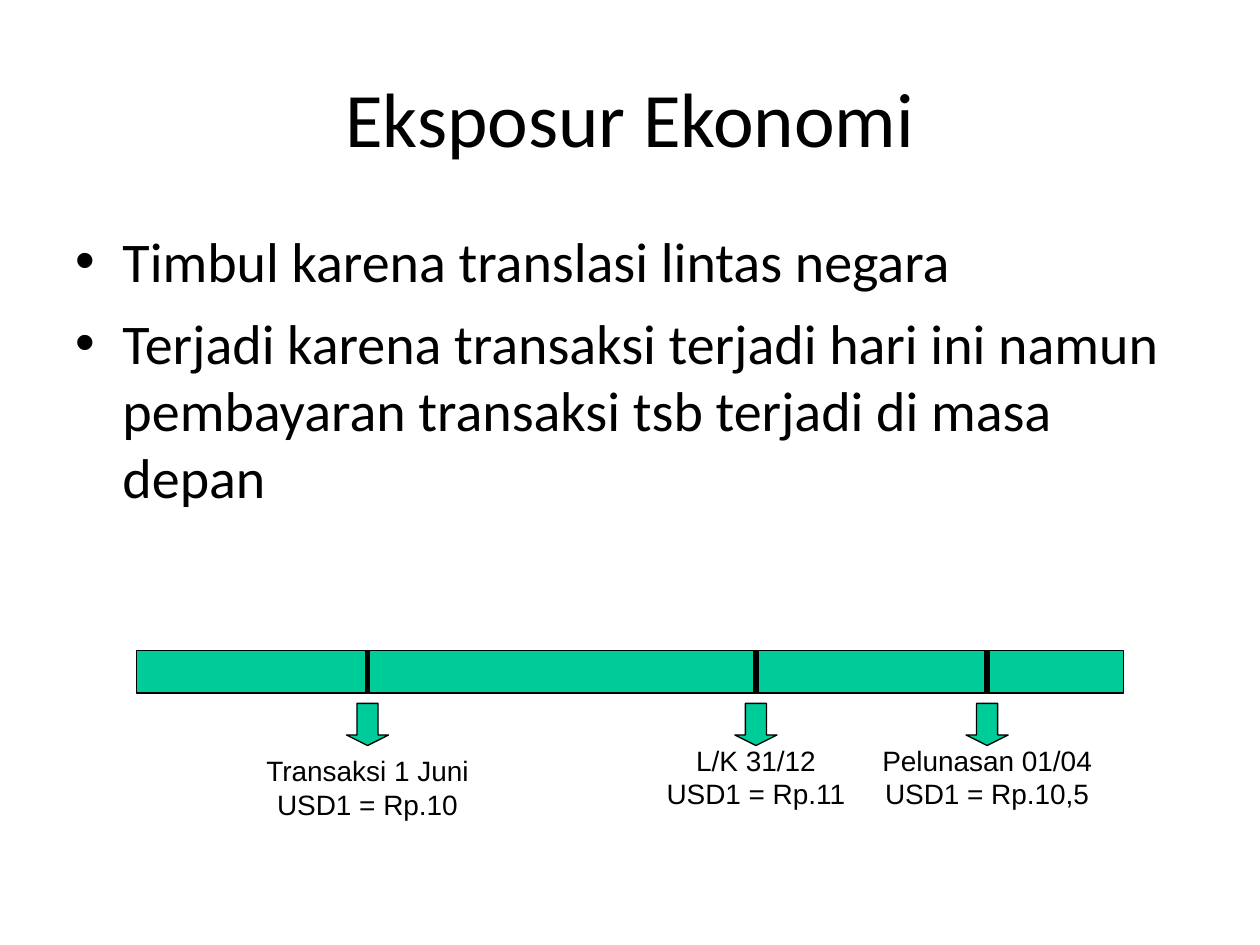
from lxml.etree import SubElement
from pptx import Presentation
from pptx.dml.color import RGBColor
from pptx.enum.shapes import MSO_CONNECTOR, MSO_SHAPE
from pptx.enum.text import MSO_ANCHOR, PP_ALIGN
from pptx.oxml.ns import qn
from pptx.util import Cm, Pt

# Content
TITLE = "Eksposur Ekonomi"
BULLETS = [
    "Timbul karena translasi lintas negara",
    "Terjadi karena transaksi terjadi hari ini namun pembayaran transaksi tsb "
    "terjadi di masa depan",
]
# Centre of the mark (cm), label height (cm), label lines
EVENTS = [
    (7.41, 3.39, ["Transaksi 1 Juni", "USD1 = Rp.10"]),
    (15.24, 2.96, ["L/K 31/12", "USD1 = Rp.11"]),
    (19.9, 2.96, ["Pelunasan 01/04", "USD1 = Rp.10,5"]),
]
COLORS = {"text": "000000", "line": "000000", "bar": "00CC99"}

# Layout in cm
MARGIN, CONTENT_WIDTH = 1.27, 22.86
BAR_LEFT, BAR_TOP, BAR_WIDTH, BAR_HEIGHT = 2.75, 13.12, 19.9, 0.85
ARROW_TOP, ARROW_SIZE = 14.18, 0.85
LABEL_WIDTH = 2.96
BULLET_INDENT = 0.95


def color(name):
    return RGBColor.from_string(COLORS[name])


def fill_text(box, lines, size, font, align, anchor, wrap=True):
    frame = box.text_frame
    frame.word_wrap = wrap
    frame.vertical_anchor = anchor
    frame.text = "\n".join(lines)
    for para in frame.paragraphs:
        para.alignment = align
        for span in para.runs:
            span.font.size = Pt(size)
            span.font.name = font
            span.font.color.rgb = color("text")


def add_bullet(para):
    properties = para._p.get_or_add_pPr()
    properties.set("marL", str(Cm(BULLET_INDENT)))
    properties.set("indent", str(-Cm(BULLET_INDENT)))
    SubElement(properties, qn("a:buFont"), typeface="Arial")
    SubElement(properties, qn("a:buChar"), char="•")


def add_shape(slide, kind, *place):
    shape = slide.shapes.add_shape(kind, *(Cm(value) for value in place))
    shape.shadow.inherit = False
    return shape


def add_block(slide, kind, *place):
    block = add_shape(slide, kind, *place)
    block.fill.solid()
    block.fill.fore_color.rgb = color("bar")
    block.line.color.rgb = color("line")
    block.line.width = Pt(0.75)
    return block


def add_label(slide, center, height, lines):
    # A clear rectangle lets unwrapped lines run past its sides
    label = add_shape(slide, MSO_SHAPE.RECTANGLE, center - LABEL_WIDTH / 2, ARROW_TOP,
                      LABEL_WIDTH, height)
    label.fill.background()
    label.line.fill.background()
    fill_text(label, lines, 16, "Arial", PP_ALIGN.CENTER, MSO_ANCHOR.MIDDLE, wrap=False)


def add_mark(slide, x):
    mark = slide.shapes.add_connector(
        MSO_CONNECTOR.STRAIGHT, Cm(x), Cm(BAR_TOP), Cm(x), Cm(BAR_TOP + BAR_HEIGHT))
    mark.line.color.rgb = color("line")
    mark.line.width = Pt(3)
    SubElement(mark._element.spPr, qn("a:effectLst"))


def main():
    deck = Presentation()
    deck.slide_width, deck.slide_height = Cm(25.4), Cm(19.05)
    page = deck.slides.add_slide(deck.slide_layouts[6])

    # Title and bullets
    title = page.shapes.add_textbox(Cm(MARGIN), Cm(0.76), Cm(CONTENT_WIDTH), Cm(3.18))
    fill_text(title, [TITLE], 44, "Calibri", PP_ALIGN.CENTER, MSO_ANCHOR.MIDDLE)
    body = page.shapes.add_textbox(Cm(MARGIN), Cm(4.45), Cm(CONTENT_WIDTH), Cm(6.35))
    fill_text(body, BULLETS, 32, "Calibri", PP_ALIGN.LEFT, MSO_ANCHOR.TOP)
    for index, para in enumerate(body.text_frame.paragraphs):
        add_bullet(para)
        if index:
            para.space_before = Pt(8)

    # Timeline with its events
    add_block(page, MSO_SHAPE.RECTANGLE, BAR_LEFT, BAR_TOP, BAR_WIDTH, BAR_HEIGHT)
    for center, label_height, lines in EVENTS:
        add_mark(page, center)
        add_label(page, center, label_height, lines)
        arrow = add_block(page, MSO_SHAPE.DOWN_ARROW, center - ARROW_SIZE / 2, ARROW_TOP,
                          ARROW_SIZE, ARROW_SIZE)
        arrow.adjustments[1] = 0.25

    deck.save("out.pptx")


if __name__ == "__main__":
    main()
